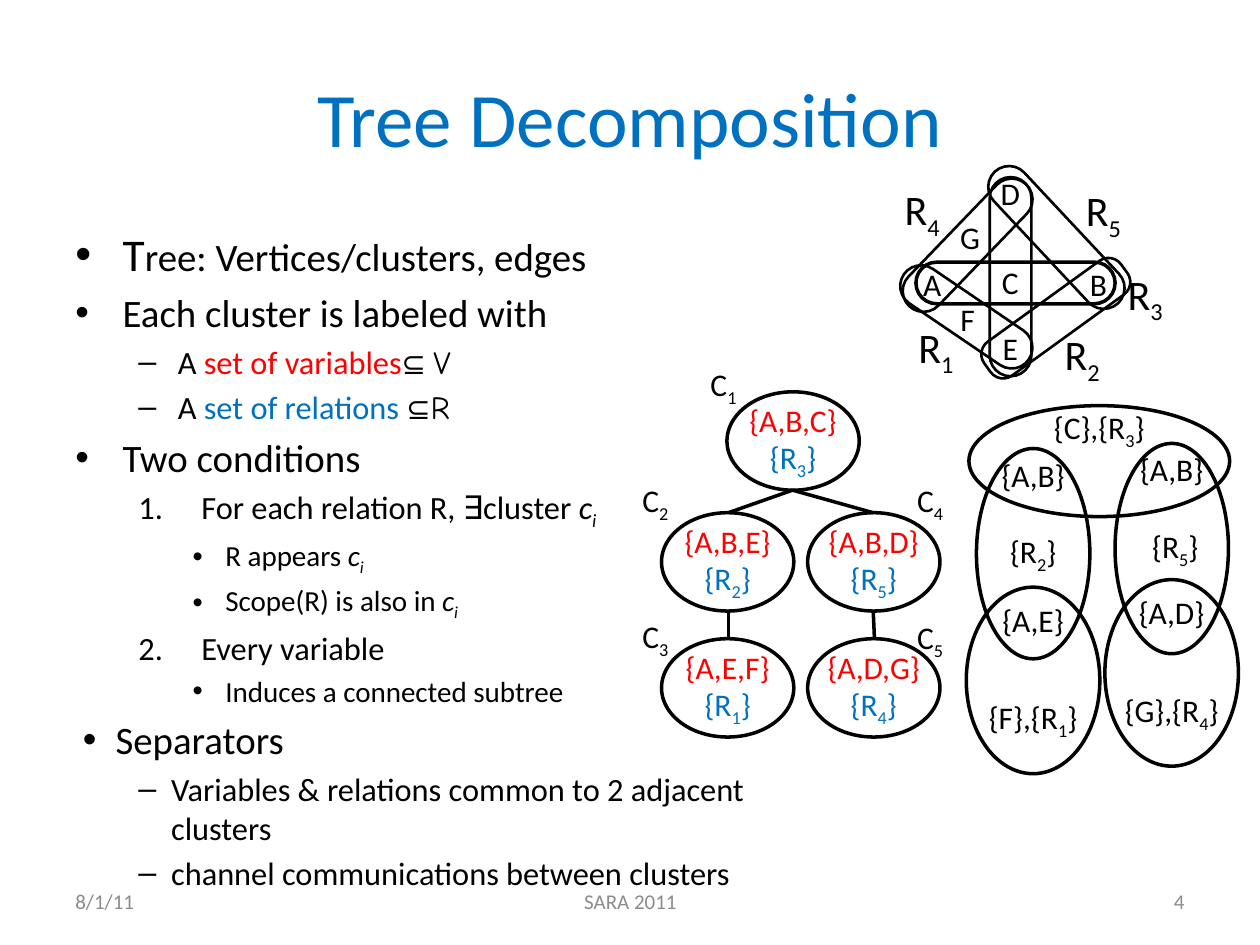
from dataclasses import dataclass
from typing import Any, NamedTuple, Optional

from pptx import Presentation
from pptx.dml.color import RGBColor as Rgb
from pptx.enum.shapes import MSO_CONNECTOR as Link, MSO_SHAPE as Kind
from pptx.enum.text import MSO_ANCHOR as Anchor, PP_ALIGN as Align
from pptx.oxml.ns import qn
from pptx.util import Pt
from lxml.etree import SubElement as Sub

HUES = {"black": "000000", "white": "FFFFFF", "red": "FF0000", "blue": "0070C0", "gray": "8C8C8C"}


class Box(NamedTuple):
    left: float
    top: float
    width: float
    height: float


@dataclass
class Run:
    text: str
    size: float = 18
    hue: str = "black"
    slant: bool = False
    face: str = "Calibri"


@dataclass
class Para:
    runs: list[Run]
    align: Any = Align.LEFT
    gap: float = 0
    level: int = 0
    left: float = 0
    hang: float = 0
    mark: str = ""
    start: int = 0


class Bar(NamedTuple):
    box: Box
    turn: float
    line: float = 1.5
    round: float = 0.5


def color(hue: str) -> Rgb:
    """Return the named colour."""
    return Rgb.from_string(HUES[hue])


def apply(target: Any, values: dict[str, Any]) -> None:
    """Set each attribute on the target."""
    for name, value in values.items():
        setattr(target, name, value)


def add_run(para: Any, run: Run) -> None:
    """Add a run in which underscores enclose subscripts."""
    for spot, text in enumerate(run.text.split("_")):
        if text:
            part = para.add_run()
            part.text = text
            apply(part.font, {"size": Pt(run.size), "name": run.face, "italic": run.slant})
            part.font.color.rgb = color(run.hue)
            if spot % 2:
                part.font._element.set("baseline", "-25000")


def add_mark(para: Any, item: Para) -> None:
    """Give a paragraph its indent and its bullet or number."""
    props = para._p.get_or_add_pPr()
    props.set("marL", str(Pt(item.left)))
    props.set("indent", str(Pt(-item.hang)))
    if item.start:
        Sub(props, qn("a:buFont"), typeface="+mj-lt")
        Sub(props, qn("a:buAutoNum"), type="arabicPeriod", startAt=str(item.start))
    else:
        Sub(props, qn("a:buFont"), typeface="Arial")
        Sub(props, qn("a:buChar"), char=item.mark)


def write(shape: Any, paras: list[Para], **frame: Any) -> None:
    """Fill a shape with paragraphs."""
    text = shape.text_frame
    apply(text, {"word_wrap": True, **frame})
    for spot, item in enumerate(paras):
        para = text.add_paragraph() if spot else text.paragraphs[0]
        apply(para, {"alignment": item.align, "level": item.level, "space_before": Pt(item.gap)})
        if item.mark or item.start:
            add_mark(para, item)
        for run in item.runs:
            add_run(para, run)


def add_text(slide: Any, box: Box, paras: list[Para], anchor: Any = Anchor.TOP) -> None:
    """Add a text box."""
    write(slide.shapes.add_textbox(*map(Pt, box)), paras, vertical_anchor=anchor)


def add_form(slide: Any, kind: Any, box: Box, line: float = 0, fill: bool = False) -> Any:
    """Add a shape with an optional outline and a pale see-through fill."""
    shape = slide.shapes.add_shape(kind, *map(Pt, box))
    shape.shadow.inherit = False
    if fill:
        shape.fill.solid()
        shape.fill.fore_color.rgb = color("white")
        Sub(shape.fill._xPr.find(".//" + qn("a:srgbClr")), qn("a:alpha"), val="48000")
    else:
        shape.fill.background()
    if line:
        shape.line.color.rgb = color("black")
        shape.line.width = Pt(line)
    else:
        shape.line.fill.background()
    return shape


def add_oval(slide: Any, box: Box, paras: list[Para], line: float = 2, fill: bool = True,
             base: float = 0, wrap: bool = True) -> None:
    """Add an ellipse with centred text."""
    shape = add_form(slide, Kind.OVAL, box, line, fill)
    write(shape, paras, vertical_anchor=Anchor.MIDDLE, word_wrap=wrap, margin_left=0,
          margin_right=0, margin_top=0, margin_bottom=Pt(base))


def add_bar(slide: Any, bar: Bar) -> None:
    """Add a turned bar with round ends."""
    shape = add_form(slide, Kind.ROUNDED_RECTANGLE, bar.box, bar.line)
    shape.adjustments[0] = bar.round
    shape.rotation = bar.turn


def add_line(slide: Any, ends: tuple[float, ...]) -> None:
    """Add a straight black line."""
    line = slide.shapes.add_connector(Link.STRAIGHT, *map(Pt, ends))
    line.line.color.rgb = color("black")
    line.line.width = Pt(2)
    Sub(line._element.spPr, qn("a:effectLst"))


def mid(text: str, hue: str = "black", gap: float = 0) -> Para:
    """Return a centred paragraph."""
    return Para([Run(text, hue=hue)], Align.CENTER, gap)


def top(*runs: Run, left: float = 27, hang: float = 27) -> Para:
    """Return a first-level bullet."""
    return Para(list(runs), gap=runs[0].size / 5, left=left, hang=hang, mark="•")


def dash(*runs: Run, left: float = 58.5, hang: float = 22.5) -> Para:
    """Return a second-level dash."""
    return Para(list(runs), gap=3.7, level=1, left=left, hang=hang, mark="–")


def step(start: int, *runs: Run) -> Para:
    """Return a numbered second-level item."""
    return Para(list(runs), gap=3.7, level=1, left=72, hang=36, start=start)


def dot(*runs: Run) -> Para:
    """Return a third-level bullet."""
    return Para(list(runs), gap=3.3, level=2, left=85.7, hang=18.7, mark="•")


BIG, MED, LOW = 22.2, 18.5, 16.6
PEN = "Comic Neue"
BODY = [
    top(Run("T", 25.9), Run("ree: Vertices/clusters, edges", BIG)),
    top(Run("Each cluster is labeled with", BIG)),
    dash(Run("A", MED), Run(" set of variables", MED, "red"), Run("⊆", LOW), Run(" ", MED),
         Run("V", MED, face=PEN)),
    dash(Run("A ", MED), Run("set of relations ", MED, "blue"), Run("⊆", LOW),
         Run("R", MED, face=PEN)),
    top(Run("Two conditions", BIG)),
    step(1, Run("For each relation R, ∃cluster ", MED), Run("c_i_", MED, slant=True)),
    dot(Run("R appears ", LOW), Run("c_i_", LOW, slant=True)),
    dot(Run("Scope(R) is also in ", LOW), Run("c_i_", LOW, slant=True)),
    step(2, Run("Every variable", MED)),
    dot(Run("Induces a connected subtree", LOW)),
    top(Run("Separators", BIG), left=23, hang=18.7),
    dash(Run("Variables & relations common to 2 adjacent clusters", MED), left=54.7, hang=18.7),
    dash(Run("channel communications between clusters", MED), left=54.7, hang=18.7),
]
FEET = [("8/1/11", 36, 167.8, Align.LEFT), ("SARA 2011", 246.2, 228.2, Align.CENTER),
        ("4", 516.2, 167.8, Align.RIGHT)]
TREE = [("A,B,C", 3, 415.4, 223.9), ("A,B,E", 2, 378, 293), ("A,E,F", 1, 378, 365),
        ("A,B,D", 5, 461.5, 293), ("A,D,G", 4, 461.5, 365)]
LINKS = [(452.9, 280.1, 416.2, 293), (452.9, 280.1, 499, 293),
         (416.2, 365, 416.2, 349.2), (499, 349.2, 499.7, 365)]
NODES = [("F", 538.6, 167.8), ("E", 563, 184.3), ("A", 518.4, 147.6), ("B", 613.4, 147.6),
         ("C", 563, 146.9), ("G", 540, 121), ("D", 563, 95.8)]
BARS = [Bar(Box(523.4, 149.8, 113.8, 23.8), 0, 2), Bar(Box(504.7, 128.2, 96.5, 23.8), 313.9),
        Bar(Box(520.6, 146.2, 113.8, 23.8), 270), Bar(Box(509, 169.2, 86.4, 23.8), 34.2),
        Bar(Box(555.1, 169.9, 96.5, 23.8), 324.1, round=0.37),
        Bar(Box(552.2, 123.8, 103, 23.8), 46.9)]
TAGS = [("R_1_", 517.7, 180), ("R_2_", 601.2, 184.3), ("R_4_", 509.8, 101.5),
        ("R_5_", 613.4, 102.2), ("R_3_", 637.2, 149.8), ("C_1_", 398.9, 205.2),
        ("C_2_", 360, 271.4), ("C_4_", 517, 271.4), ("C_3_", 360, 349.2), ("C_5_", 517, 349.9)]
SETS = [(Box(553.7, 231.8, 149, 63.4), ["{C},{R_3_}"], 0, 36),
        (Box(558, 256.3, 64.8, 120.2), ["{A,B}", "{R_2_}"], 22, 44),
        (Box(552.2, 335.5, 76.3, 106.6), ["{A,E}", "{F},{R_1_}"], 34.2, 10.8),
        (Box(637.2, 253.4, 64.8, 120.2), ["{A,B}", " {R_5_}"], 22, 44),
        (Box(631.4, 331.2, 76.3, 106.6), ["{A,D}", "{G},{R_4_}"], 34.2, 10.8)]


def main() -> None:
    """Build and save the slide."""
    deck = Presentation()
    apply(deck, {"slide_width": Pt(720), "slide_height": Pt(540)})
    slide = deck.slides.add_slide(deck.slide_layouts[6])
    title = Para([Run("Tree Decomposition", 44, "blue")], Align.CENTER)
    add_text(slide, Box(36, 21.6, 648, 90), [title], Anchor.MIDDLE)
    add_text(slide, Box(36, 126, 414, 393.1), BODY)
    for text, left, width, align in FEET:
        foot = Para([Run(text, 12, "gray")], align)
        add_text(slide, Box(left, 500.4, width, 28.8), [foot], Anchor.MIDDLE)
    for names, num, left, high in TREE:
        paras = [mid(f"{{{names}}}", "red"), mid(f"{{R_{num}_}}", "blue")]
        add_oval(slide, Box(left, high, 75.6, 56.2), paras)
    for ends in LINKS:
        add_line(slide, ends)
    for name, left, high in NODES:
        add_oval(slide, Box(left, high, 28.8, 28.8), [mid(name)], line=0)
    for bar in BARS:
        add_bar(slide, bar)
    for box, texts, gap, base in SETS:
        paras = [mid(text, gap=gap * spot) for spot, text in enumerate(texts)]
        add_oval(slide, box, paras, fill=False, base=base, wrap=False)
    for text, left, high in TAGS:
        size, width, tall = (24, 37.4, 36) if text[0] == "R" else (18, 35.3, 28.8)
        add_text(slide, Box(left, high, width, tall), [Para([Run(text, size)])])
    deck.save("out.pptx")


if __name__ == "__main__":
    main()
